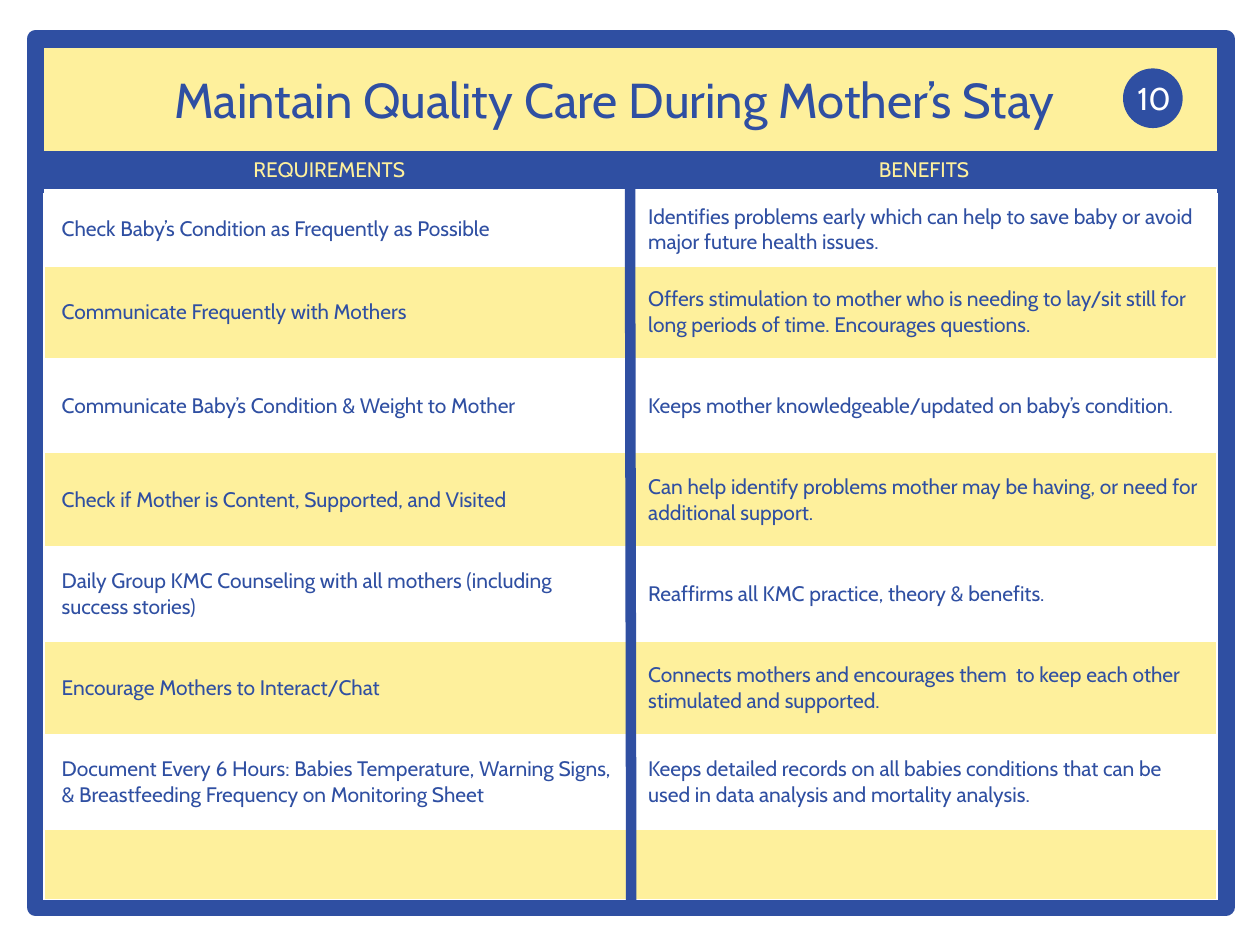
from dataclasses import dataclass

from lxml import etree
from pptx import Presentation
from pptx.dml.color import RGBColor
from pptx.enum.shapes import MSO_CONNECTOR, MSO_SHAPE
from pptx.enum.text import MSO_ANCHOR, MSO_AUTO_SIZE, PP_ALIGN
from pptx.oxml.ns import qn
from pptx.util import Inches, Pt

RECT, OVAL = MSO_SHAPE.RECTANGLE, MSO_SHAPE.OVAL
LINE = MSO_CONNECTOR.STRAIGHT
MIDDLE, TOP = MSO_ANCHOR.MIDDLE, MSO_ANCHOR.TOP
CENTER, LEFT = PP_ALIGN.CENTER, PP_ALIGN.LEFT
NO_FIT = MSO_AUTO_SIZE.NONE


@dataclass(frozen=True)
class Theme:
    blue: str = "2F4FA2"
    cream: str = "FEF09C"
    white: str = "FFFFFF"
    font: str = "Cabin"
    title: int = 28
    badge: int = 18
    text: int = 12


THEME = Theme()
EDGE, WIDTH = 0.28, 9.45
TABLE = (0.35, 1.54, 9.31, 5.6)
END_ROW = 0.56
HEADS = {"REQUIREMENTS": 0.28, "BENEFITS": 5}
ROWS = [
    ("Check Baby’s Condition as Frequently as Possible",
     "Identifies problems early which can help to save baby or avoid "
     "major future health issues."),
    ("Communicate Frequently with Mothers",
     "Offers stimulation to mother who is needing to lay/sit still for "
     "long periods of time. Encourages questions."),
    ("Communicate Baby’s Condition & Weight to Mother",
     "Keeps mother knowledgeable/updated on baby’s condition."),
    ("Check if Mother is Content, Supported, and Visited",
     "Can help identify problems mother may be having, or need for "
     "additional support."),
    ("Daily Group KMC Counseling with all mothers (including success stories)",
     "Reaffirms all KMC practice, theory & benefits."),
    ("Encourage Mothers to Interact/Chat",
     "Connects mothers and encourages them  to keep each other "
     "stimulated and supported."),
    ("Document Every 6 Hours: Babies Temperature, Warning Signs, "
     "& Breastfeeding Frequency on Monitoring Sheet",
     "Keeps detailed records on all babies conditions that can be used "
     "in data analysis and mortality analysis."),
    ("", ""),
]


def rgb(color):
    return RGBColor.from_string(color)


def set_all(item, values):
    for name, value in values.items():
        setattr(item, name, value)


def write(frame, text, size, color, align=LEFT):
    par = frame.paragraphs[0]
    par.alignment = align
    run = par.add_run()
    run.text = text
    set_all(run.font, {"name": THEME.font, "size": Pt(size)})
    run.font.color.rgb = rgb(color)


def add_box(slide, kind, area, fill=None, line=None, weight=1):
    box = slide.shapes.add_shape(kind, *map(Inches, area))
    box.shadow.inherit = False
    if fill:
        box.fill.solid()
        box.fill.fore_color.rgb = rgb(fill)
    else:
        box.fill.background()
    if line:
        box.line.color.rgb = rgb(line)
        box.line.width = Pt(weight)
    else:
        box.line.fill.background()


def add_rule(slide, *ends):
    rule = slide.shapes.add_connector(LINE, *map(Inches, ends))
    rule.line.color.rgb = rgb(THEME.blue)
    rule.line.width = Pt(6)
    etree.SubElement(rule._element.spPr, qn("a:effectLst"))


def add_label(slide, area, text, size, color, wrap=True):
    frame = slide.shapes.add_textbox(*map(Inches, area)).text_frame
    set_all(frame, {"word_wrap": wrap, "auto_size": NO_FIT,
                    "vertical_anchor": TOP})
    write(frame, text, size, color, CENTER)


def set_title(slide, text):
    title = slide.shapes.title
    area = {"left": EDGE, "top": 0.5, "width": WIDTH, "height": 0.57}
    set_all(title, {name: Inches(size) for name, size in area.items()})
    frame = title.text_frame
    set_all(frame, {"word_wrap": True, "auto_size": NO_FIT,
                    "vertical_anchor": MIDDLE, "margin_right": Inches(0.36)})
    write(frame, text, THEME.title, THEME.blue, CENTER)


def add_edges(cell, base):
    props = cell._tc.get_or_add_tcPr()
    for side in "LRTB":
        width = Pt(base if side == "B" else 1)
        edge = etree.SubElement(props, qn(f"a:ln{side}"), w=str(width))
        fill = etree.SubElement(edge, qn("a:solidFill"))
        etree.SubElement(fill, qn("a:srgbClr"), val=THEME.white)


def fill_cell(cell, text, row):
    set_all(cell, {"vertical_anchor": MIDDLE, "margin_left": Inches(0.14),
                   "margin_right": Inches(0.07), "margin_top": Inches(0.04),
                   "margin_bottom": Inches(0.04)})
    add_edges(cell, 1 if row else 3)
    cell.fill.solid()
    cell.fill.fore_color.rgb = rgb(THEME.cream if row % 2 else THEME.white)
    if text:
        write(cell.text_frame, text, THEME.text, THEME.blue)


def add_grid(slide):
    count = len(ROWS)
    grid = slide.shapes.add_table(count, 2, *map(Inches, TABLE)).table
    inner = (TABLE[3] - 2 * END_ROW) / (count - 2)
    for row, texts in enumerate(ROWS):
        high = END_ROW if row in (0, count - 1) else inner
        grid.rows[row].height = Inches(high)
        for col, text in enumerate(texts):
            fill_cell(grid.cell(row, col), text, row)


def main():
    deck = Presentation()
    deck.slide_width, deck.slide_height = Inches(10), Inches(7.5)
    slide = deck.slides.add_slide(deck.slide_layouts[5])

    add_box(slide, RECT, (EDGE, 0.31, WIDTH, 1.18), THEME.cream)
    add_box(slide, RECT, (EDGE, 0.31, WIDTH, 6.89), None, THEME.blue, 10)
    add_box(slide, RECT, (EDGE, 1.2, WIDTH, 0.3), THEME.blue)
    for text, left in HEADS.items():
        add_label(slide, (left, 1.19, 4.67, 0.3), text, THEME.text, THEME.cream)
    add_grid(slide)
    add_rule(slide, 5, 1.46, 5.01, 7.15)

    title = slide.shapes.title._element
    slide.shapes._spTree.append(title)
    set_title(slide, "Maintain Quality Care During Mother’s Stay")
    add_rule(slide, EDGE, 1.46, 9.66, 1.46)
    add_box(slide, OVAL, (8.92, 0.55, 0.46, 0.46), THEME.blue, THEME.blue)
    add_label(slide, (8.92, 0.58, 0.48, 0.4), "10", THEME.badge, THEME.white,
              wrap=False)
    deck.save("out.pptx")


if __name__ == "__main__":
    main()
